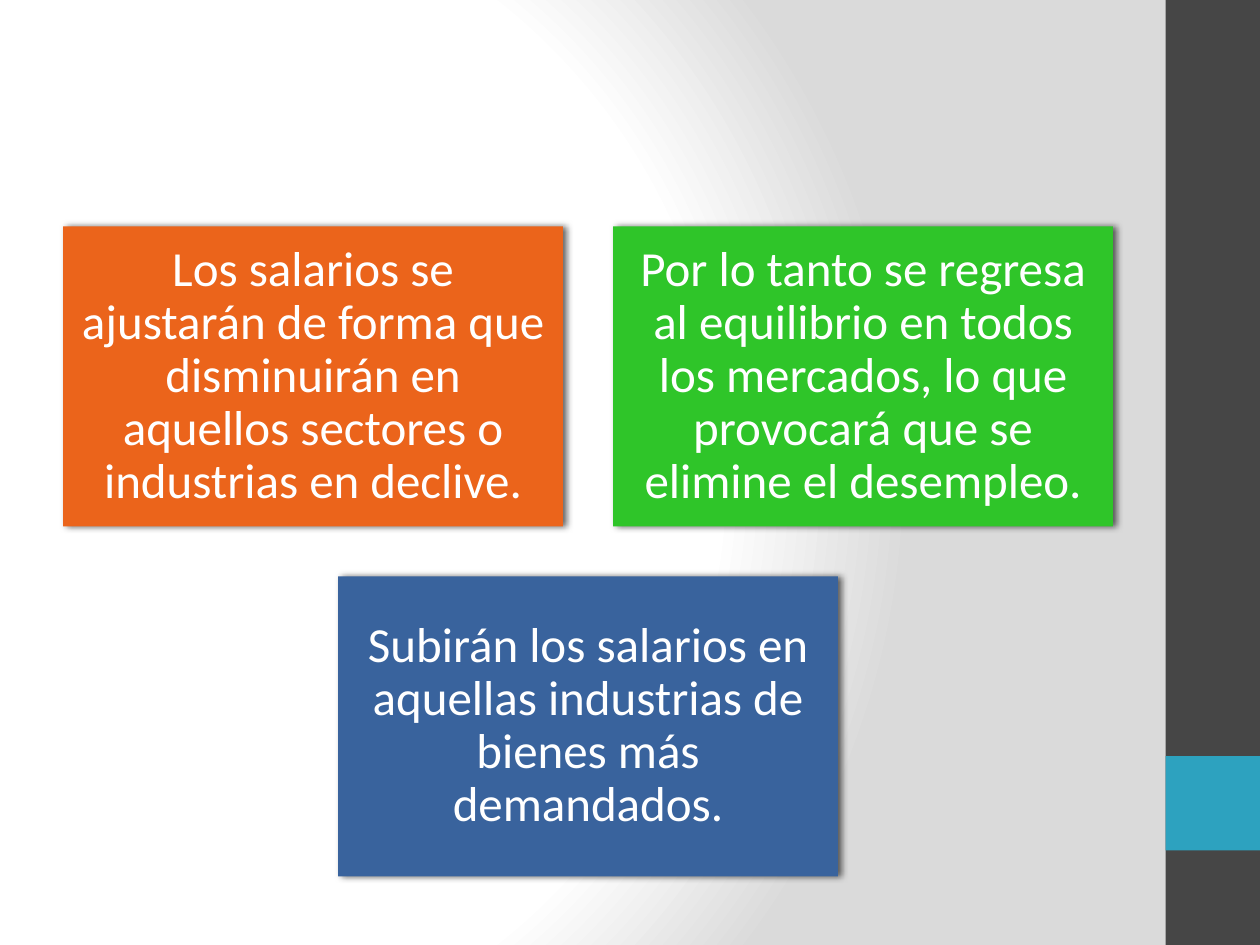
import pptx
import pptx.dml.color
import pptx.enum.shapes
import pptx.enum.text
import pptx.oxml
import pptx.oxml.ns
import pptx.util

Pt = pptx.util.Pt
COLORS = {
    "white": "FFFFFF", "gray": "DADADA", "dark": "464646", "teal": "2DA2BF",
    "orange": "EB641B", "green": "2FC529", "blue": "39639D", "shadow": "000000",
}
NAMESPACE = pptx.oxml.ns.nsdecls("a")


def add_rectangle(page, left, top, width, height, color):
    box = page.shapes.add_shape(
        pptx.enum.shapes.MSO_SHAPE.RECTANGLE, Pt(left), Pt(top), Pt(width), Pt(height))
    box.shadow.inherit = False
    box.fill.solid()
    box.fill.fore_color.rgb = pptx.dml.color.RGBColor.from_string(COLORS[color])
    box.line.fill.background()
    return box


deck = pptx.Presentation()
deck.slide_width, deck.slide_height = Pt(720), Pt(540)
page = deck.slides.add_slide(deck.slide_layouts[6])

# Background: radial gradient from white to gray
page.background.fill.solid()
solid = page.element.xpath(".//p:bgPr/a:solidFill")[0]
stops = "".join(
    f'<a:gs pos="{position * 1000}"><a:srgbClr val="{COLORS[color]}"/></a:gs>'
    for position, color in [(0, "white"), (75, "white"), (100, "gray")])
solid.getparent().replace(solid, pptx.oxml.parse_xml(
    f'<a:gradFill {NAMESPACE} rotWithShape="1"><a:gsLst>{stops}</a:gsLst>'
    '<a:path path="circle"><a:fillToRect l="20000" t="50000" r="100000" b="50000"/>'
    '</a:path></a:gradFill>'))

# Side band with accent square
add_rectangle(page, 666, 0, 54, 540, "dark")
add_rectangle(page, 666, 432, 54, 54, "teal")

# Cards: two on top, one centred below
LEFT, TOP, WIDTH, HEIGHT, GAP = 36, 129.4, 285.7, 171.4, 28.6
STEP = WIDTH + GAP
cards = [
    (0, 0, "orange", "Los salarios se ajustarán de forma que disminuirán en "
                     "aquellos sectores o industrias en declive."),
    (1, 0, "green", "Por lo tanto se regresa al equilibrio en todos los mercados, "
                    "lo que provocará que se elimine el desempleo."),
    (0.5, 1, "blue", "Subirán los salarios en aquellas industrias de bienes más "
                     "demandados."),
]
for column, row, color, text in cards:
    card = add_rectangle(
        page, LEFT + column * STEP, TOP + row * (HEIGHT + GAP), WIDTH, HEIGHT, color)
    effects = card.element.spPr.find(pptx.oxml.ns.qn("a:effectLst"))
    effects.append(pptx.oxml.parse_xml(
        f'<a:outerShdw {NAMESPACE} blurRad="{Pt(4)}" dist="{Pt(2)}" dir="0" '
        f'rotWithShape="0"><a:srgbClr val="{COLORS["shadow"]}">'
        '<a:alpha val="60000"/></a:srgbClr></a:outerShdw>'))

    frame = card.text_frame
    frame.word_wrap = True
    frame.vertical_anchor = pptx.enum.text.MSO_ANCHOR.MIDDLE
    frame.margin_left = frame.margin_right = Pt(8.4)
    frame.margin_top = frame.margin_bottom = Pt(8.4)
    para = frame.paragraphs[0]
    para.text = text
    para.alignment = pptx.enum.text.PP_ALIGN.CENTER
    para.line_spacing = 0.9
    para.space_after = Pt(9.8)
    para.font.name = "Calibri"
    para.font.size = Pt(28)
    para.font.color.rgb = pptx.dml.color.RGBColor.from_string(COLORS["white"])

deck.save("out.pptx")
